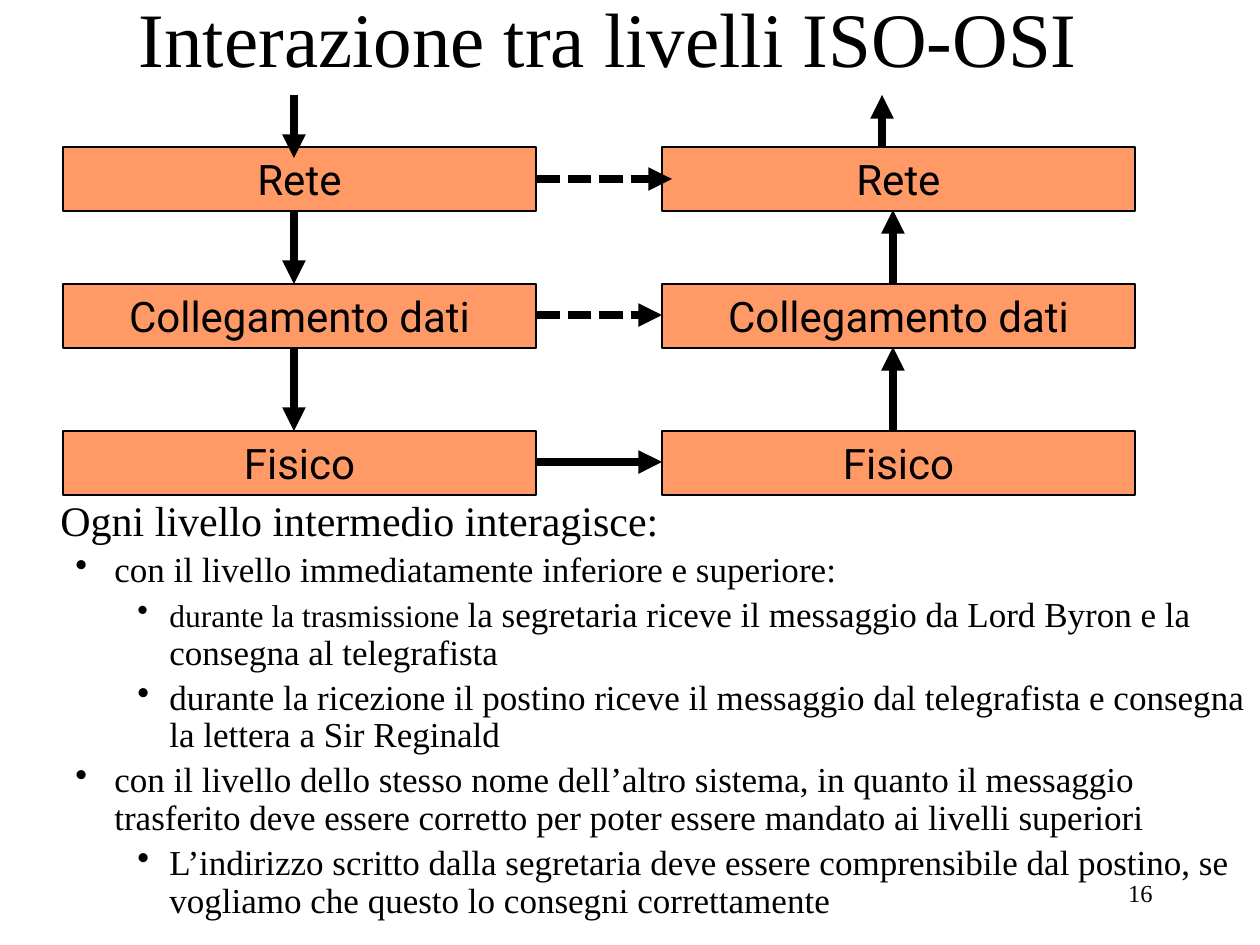
"""Builds the slide on interaction between ISO-OSI layers."""
from lxml import etree
from pptx import Presentation
from pptx.dml.color import RGBColor
from pptx.enum.dml import MSO_LINE
from pptx.enum.shapes import MSO_CONNECTOR, MSO_SHAPE
from pptx.enum.text import MSO_ANCHOR, PP_ALIGN
from pptx.oxml.ns import qn
from pptx.util import Emu, Pt

CENTER, RIGHT, LEFT = PP_ALIGN.CENTER, PP_ALIGN.RIGHT, PP_ALIGN.LEFT
MIDDLE, TOP = MSO_ANCHOR.MIDDLE, MSO_ANCHOR.TOP
SOLID, DOTTED = MSO_LINE.SOLID, MSO_LINE.SQUARE_DOT
SCALE = 914400 / 126
BLACK, ORANGE = "000000", "FF9966"


def px(*lengths):
    return [Emu(round(length * SCALE)) for length in lengths]


def write(paragraph, text, size=20, font="Times New Roman", color=BLACK, align=LEFT):
    paragraph.alignment = align
    run = paragraph.add_run()
    run.text = text
    run.font.size = Pt(size)
    run.font.name = font
    run.font.color.rgb = RGBColor.from_string(color)


presentation = Presentation()
presentation.slide_width, presentation.slide_height = px(1260, 945)
slide = presentation.slides.add_slide(presentation.slide_layouts[6])

frames = []
for box, anchor in (
    ((903, 861, 262, 63), MIDDLE),
    ((73, -42, 1071, 158), MIDDLE),
    ((0, 494, 1260, 430), TOP),
):
    frame = slide.shapes.add_textbox(*px(*box)).text_frame
    frame.word_wrap = True
    frame.vertical_anchor = anchor
    frames.append(frame)
number, title, body = frames
write(number.paragraphs[0], "16", size=14, align=RIGHT)
write(title.paragraphs[0], "Interazione tra livelli ISO-OSI", size=44, align=CENTER)

INDENTS = [(48, 0), (102, -39), (157, -32)]
body_lines = [
    (0, [("Ogni livello intermedio interagisce:", 24)]),
    (1, [("con il livello immediatamente inferiore e superiore:", 20)]),
    (2, [("durante la trasmissione ", 18),
         ("la segretaria riceve il messaggio da Lord Byron e la consegna al telegrafista", 20)]),
    (2, [("durante la ricezione il postino riceve il messaggio dal telegrafista "
          "e consegna la lettera a Sir Reginald", 20)]),
    (1, [("con il livello dello stesso nome dell’altro sistema, in quanto il messaggio "
          "trasferito deve essere corretto per poter essere mandato ai livelli superiori", 20)]),
    (2, [("L’indirizzo scritto dalla segretaria deve essere comprensibile dal postino, "
          "se vogliamo che questo lo consegni correttamente", 20)]),
]
for index, (level, runs) in enumerate(body_lines):
    paragraph = body.add_paragraph() if index else body.paragraphs[0]
    paragraph.level = level
    paragraph.line_spacing = 0.9
    paragraph.space_before = Pt(4 if index else 0)
    properties = paragraph._p.get_or_add_pPr()
    margin, indent = px(*INDENTS[level])
    properties.set("marL", str(margin))
    properties.set("indent", str(indent))
    if level:
        etree.SubElement(properties, qn("a:buChar"), char="•")
    for text, size in runs:
        write(paragraph, text, size=size)

for left in (63, 662):
    for top, layer in ((147, "Rete"), (284, "Collegamento dati"), (431, "Fisico")):
        shape = slide.shapes.add_shape(MSO_SHAPE.RECTANGLE, *px(left, top, 473, 64))
        shape.shadow.inherit = False
        shape.fill.solid()
        shape.fill.fore_color.rgb = RGBColor.from_string(ORANGE)
        shape.line.color.rgb = RGBColor.from_string(BLACK)
        shape.line.width = Pt(0.75)
        write(shape.text_frame.paragraphs[0], layer, size=24, font="Roboto", align=CENTER)

arrows = [
    (294, 95, 294, 158, SOLID),
    (294, 210, 294, 284, SOLID),
    (294, 347, 294, 431, SOLID),
    (536, 462, 662, 462, SOLID),
    (893, 431, 893, 347, SOLID),
    (893, 284, 893, 210, SOLID),
    (882, 147, 882, 95, SOLID),
    (536, 179, 672, 179, DOTTED),
    (536, 315, 662, 315, DOTTED),
]
for *ends, dash in arrows:
    arrow = slide.shapes.add_connector(MSO_CONNECTOR.STRAIGHT, *px(*ends))
    arrow.line.color.rgb = RGBColor.from_string(BLACK)
    arrow.line.width = Pt(4.5)
    arrow.line.dash_style = dash
    etree.SubElement(arrow.line._get_or_add_ln(), qn("a:tailEnd"), type="triangle")
    etree.SubElement(arrow._element.spPr, qn("a:effectLst"))

presentation.save("out.pptx")
